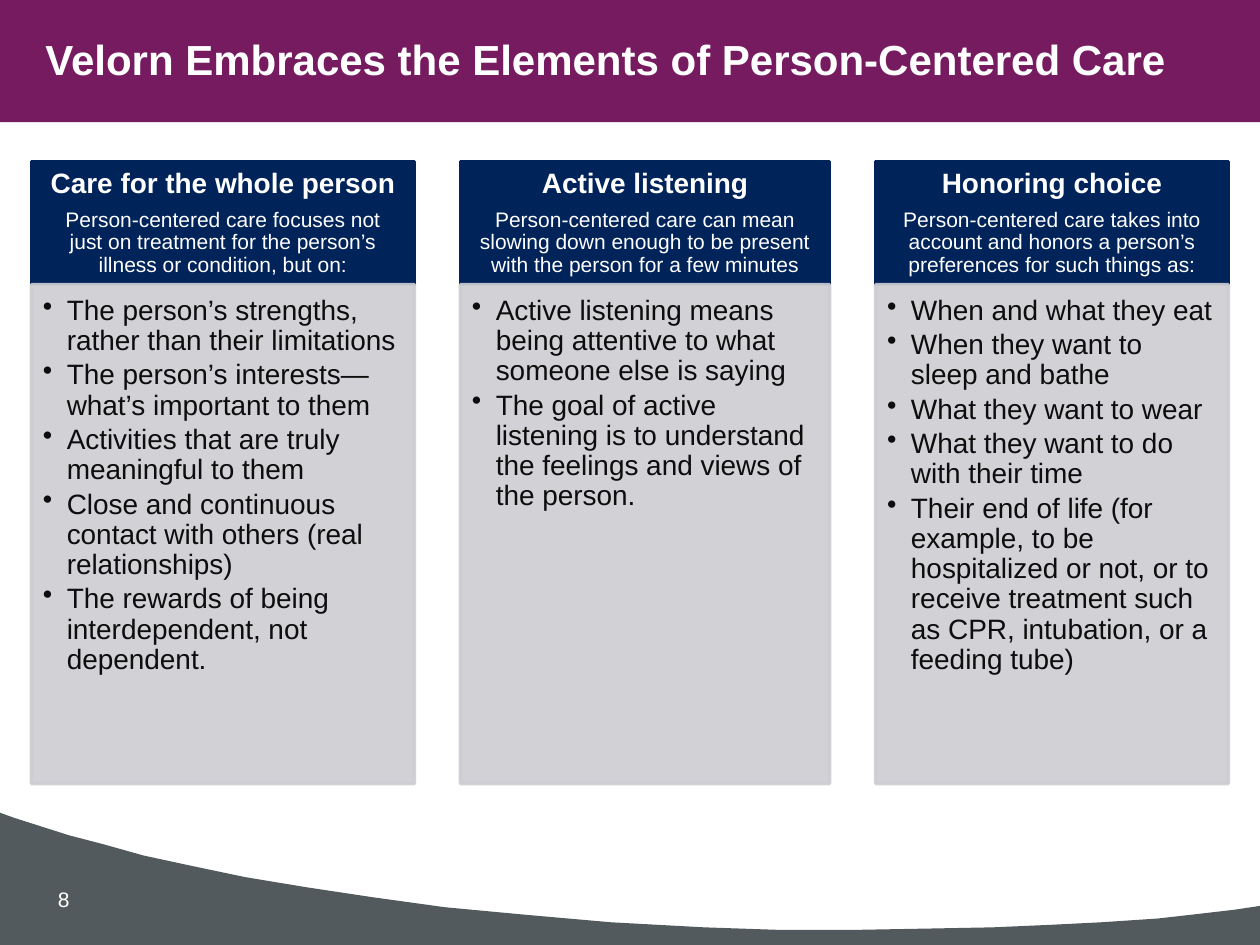
"""Build the slide on the elements of person-centered care."""
from lxml import etree
from pptx import Presentation
from pptx.dml.color import RGBColor
from pptx.enum.shapes import MSO_SHAPE
from pptx.enum.text import MSO_ANCHOR, PP_ALIGN
from pptx.oxml.ns import qn
from pptx.util import Inches, Pt

RECTANGLE = MSO_SHAPE.RECTANGLE
TOP, MIDDLE = MSO_ANCHOR.TOP, MSO_ANCHOR.MIDDLE
LEFT, CENTER = PP_ALIGN.LEFT, PP_ALIGN.CENTER
COLORS = {"plum": "771B61", "navy": "00235A", "silver": "CCCDD2",
          "slate": "535A5D", "ink": "0D0D0D", "white": "FFFFFF"}
WIDTH, HEIGHT = 10, 7.5
MARGIN, GAP = 0.25, 0.365
HEADER_TOP, HEADER_HEIGHT, LIST_HEIGHT = 1.28, 0.98, 3.96
INDENT = Inches(0.19)

COLUMNS = [
    (3.04, "Care for the whole person",
     "Person-centered care focuses not just on treatment for the person’s "
     "illness or condition, but on:",
     ["The person’s strengths, rather than their limitations",
      "The person’s interests—what’s important to them",
      "Activities that are truly meaningful to them",
      "Close and continuous contact with others (real relationships)",
      "The rewards of being interdependent, not dependent."]),
    (2.93, "Active listening",
     "Person-centered care can mean slowing down enough to be present "
     "with the person for a few minutes",
     ["Active listening means being attentive to what someone else is saying",
      "The goal of active listening is to understand the feelings and views "
      "of the person."]),
    (2.8, "Honoring choice",
     "Person-centered care takes into account and honors a person’s "
     "preferences for such things as:",
     ["When and what they eat",
      "When they want to sleep and bathe",
      "What they want to wear",
      "What they want to do with their time",
      "Their end of life (for example, to be hospitalized or not, or to "
      "receive treatment such as CPR, intubation, or a feeding tube)"]),
]

WAVE = [(0, 6.45), (0.11, 6.49), (0.33, 6.56), (0.55, 6.63), (0.82, 6.7),
        (1.14, 6.79), (1.51, 6.87), (1.94, 6.96), (2.42, 7.04), (2.95, 7.12),
        (3.53, 7.2), (4.17, 7.26), (4.85, 7.32), (5.59, 7.36), (6.18, 7.38),
        (6.79, 7.38), (7.36, 7.37), (7.88, 7.36), (8.34, 7.34), (8.74, 7.32),
        (9.19, 7.29), (9.54, 7.25), (9.8, 7.22), (10, 7.19),
        (WIDTH, HEIGHT), (0, HEIGHT)]


def paint(shape, color, outlined=False):
    shape.shadow.inherit = False
    shape.fill.solid()
    shape.fill.fore_color.rgb = RGBColor.from_string(COLORS[color])
    if outlined:
        shape.line.color.rgb = RGBColor.from_string(COLORS[color])
        shape.line.width = Pt(2)
    else:
        shape.line.fill.background()


def write(shape, lines, color, anchor, align, insets, bulleted=False):
    frame = shape.text_frame
    frame.word_wrap = True
    frame.vertical_anchor = anchor
    (frame.margin_left, frame.margin_top,
     frame.margin_right, frame.margin_bottom) = map(Inches, insets)
    for index, (text, size, bold, space_share) in enumerate(lines):
        paragraph = frame.add_paragraph() if index else frame.paragraphs[0]
        paragraph.text = text
        paragraph.alignment = align
        paragraph.line_spacing = 0.9
        paragraph.space_after = Pt(size * space_share)
        if bulleted:
            properties = paragraph._p.get_or_add_pPr()
            properties.set("marL", str(INDENT))
            properties.set("indent", str(-INDENT))
            etree.SubElement(properties, qn("a:buChar")).set("char", "•")
        paragraph.font.name = "Arial"
        paragraph.font.size = Pt(size)
        paragraph.font.bold = bold
        paragraph.font.color.rgb = RGBColor.from_string(COLORS[color])


deck = Presentation()
deck.slide_width, deck.slide_height = Inches(WIDTH), Inches(HEIGHT)
slide = deck.slides.add_slide(deck.slide_layouts[5])
shapes = slide.shapes

title = shapes.title
title.left, title.top = Inches(0.26), 0
title.width, title.height = Inches(9.51), Inches(0.94)
write(title, [("Velorn Embraces the Elements of Person-Centered Care", 24, True, 0)],
      "white", MIDDLE, LEFT, (0.1, 0.05, 0.1, 0.05))
title.text_frame.paragraphs[0].line_spacing = Pt(27.8)

title_band = shapes.add_shape(RECTANGLE, 0, 0, deck.slide_width, Inches(0.97))
paint(title_band, "plum")
title._element.addprevious(title_band._element)

outline = shapes.build_freeform(*map(Inches, WAVE[0]))
outline.add_line_segments([(Inches(x), Inches(y)) for x, y in WAVE[1:]])
footer_wave = outline.convert_to_shape()
paint(footer_wave, "slate")
title_band._element.addprevious(footer_wave._element)

page_number = shapes.add_textbox(Inches(0.27), Inches(6.79), Inches(0.47), Inches(0.71))
write(page_number, [("8", 12, False, 0)], "white", MIDDLE, CENTER, (0, 0, 0, 0))

column_left = MARGIN
for column_width, heading, summary, points in COLUMNS:
    header = shapes.add_shape(RECTANGLE, Inches(column_left), Inches(HEADER_TOP),
                              Inches(column_width), Inches(HEADER_HEIGHT))
    paint(header, "navy", outlined=True)
    write(header, [(heading, 16, True, 0.35), (summary, 12, False, 0.35)],
          "white", MIDDLE, CENTER, (0.12, 0.07, 0.12, 0.07))

    details = shapes.add_shape(RECTANGLE, Inches(column_left),
                               Inches(HEADER_TOP + HEADER_HEIGHT),
                               Inches(column_width), Inches(LIST_HEIGHT))
    paint(details, "silver", outlined=True)
    for tint in details._element.spPr.iter(qn("a:srgbClr")):
        etree.SubElement(tint, qn("a:alpha")).set("val", "90000")
    write(details, [(point, 16, False, 0.15) for point in points],
          "ink", TOP, LEFT, (0.09, 0.09, 0.12, 0.14), bulleted=True)
    column_left += column_width + GAP

deck.save("out.pptx")
